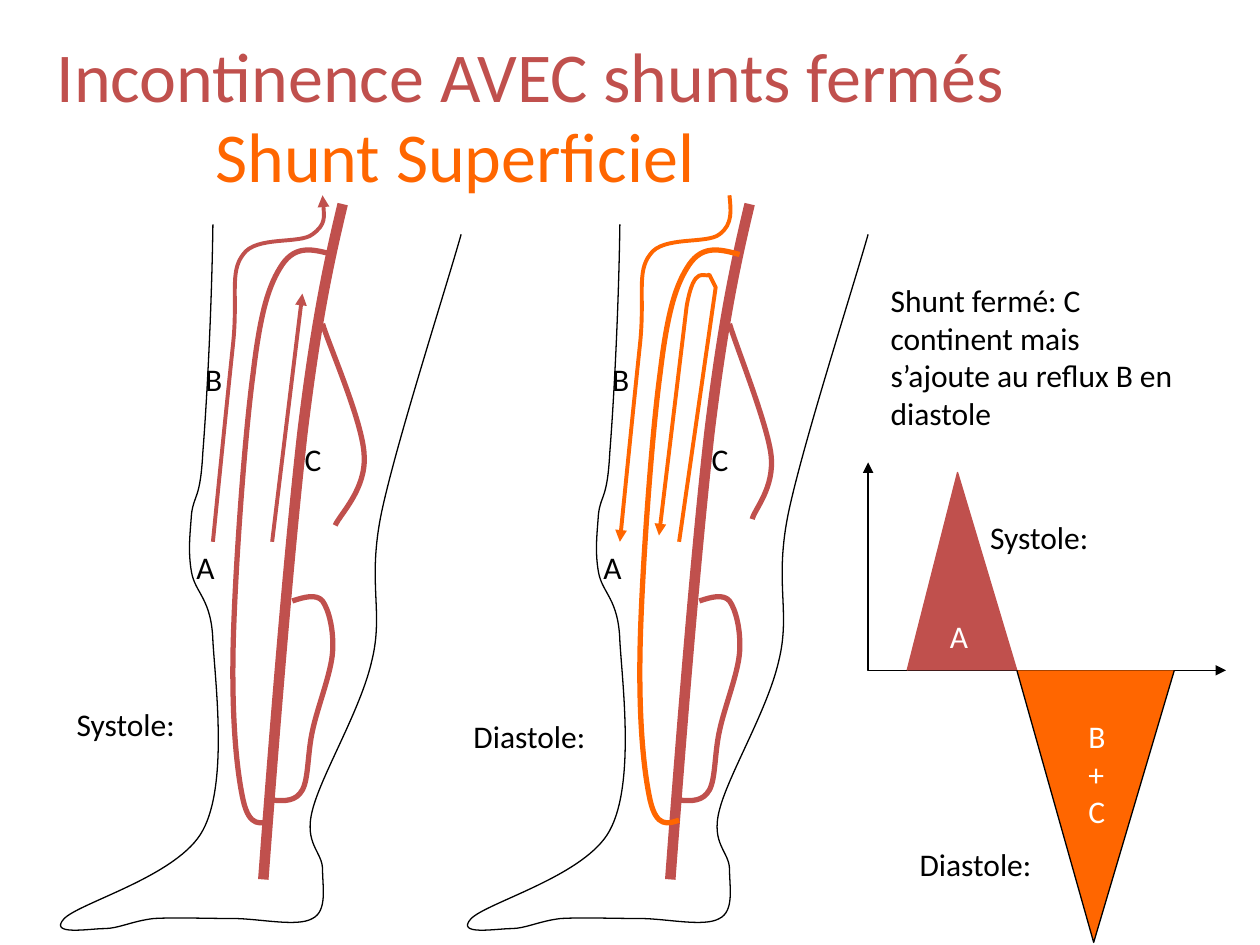
from lxml import etree
from pptx import Presentation
from pptx.dml.color import RGBColor as Rgb
from pptx.enum.shapes import MSO_CONNECTOR as Link
from pptx.enum.text import MSO_AUTO_SIZE as Fit
from pptx.oxml.ns import qn
from pptx.util import Inches, Pt

HUES = {"red": "C0504D", "orange": "FF6600", "black": "000000", "white": "FFFFFF"}
STEP = 3.23  # gap between the two legs

# A path is a start point, then segments: 2 numbers for a line, 6 for a curve.
SKIN = [
    (1.69, 1.78), (1.68, 2.49, 1.64, 3.21, 1.61, 3.59),
    (1.59, 3.97, 1.54, 3.92, 1.52, 4.08), (1.51, 4.23, 1.49, 4.37, 1.52, 4.54),
    (1.55, 4.71, 1.68, 4.75, 1.69, 5.09), (1.71, 5.43, 1.81, 6.22, 1.61, 6.59),
    (1.42, 6.95, 0.64, 7.16, 0.51, 7.29), (0.38, 7.43, 0.71, 7.37, 0.83, 7.37),
    (0.94, 7.37, 1.05, 7.31, 1.22, 7.29), (1.39, 7.28, 1.64, 7.29, 1.85, 7.29),
    (2.06, 7.29, 2.36, 7.36, 2.48, 7.29), (2.6, 7.23, 2.56, 7.04, 2.56, 6.9),
    (2.56, 6.76, 2.41, 6.7, 2.48, 6.43), (2.55, 6.15, 2.86, 5.64, 2.95, 5.25),
    (3.05, 4.85, 2.91, 4.63, 3.03, 4.06), (3.15, 3.5, 3.53, 2.32, 3.66, 1.86),
]
DEEP = [(2.72, 1.62), (2.61, 2.08, 2.51, 2.54, 2.4, 3.44),
        (2.3, 4.33, 2.19, 5.65, 2.09, 6.98)]
LONG = [
    (2.64, 2.02), (2.49, 1.98, 2.35, 1.94, 2.24, 2.1),
    (2.14, 2.25, 2.07, 2.45, 2.01, 2.96), (1.94, 3.47, 1.86, 4.6, 1.85, 5.17),
    (1.84, 5.73, 1.88, 6.12, 1.93, 6.35), (1.98, 6.57, 2.07, 6.54, 2.16, 6.51),
]
CALF = [
    (2.32, 4.77), (2.41, 4.74, 2.51, 4.71, 2.56, 4.77),
    (2.61, 4.84, 2.65, 5, 2.64, 5.17), (2.63, 5.34, 2.52, 5.61, 2.48, 5.8),
    (2.44, 5.98, 2.45, 6.18, 2.4, 6.27), (2.35, 6.36, 2.26, 6.36, 2.16, 6.35),
]
FLOW = [
    (1.69, 4.3), (1.75, 3.7, 1.81, 3.11, 1.85, 2.73),
    (1.89, 2.35, 1.82, 2.16, 1.93, 2.02), (2.03, 1.87, 2.38, 1.94, 2.48, 1.86),
    (2.59, 1.78, 2.57, 1.66, 2.56, 1.55),
]
THIGH_SYS = [(2.56, 2.57), (2.61, 2.74, 2.88, 3.35, 2.89, 3.61),
             (2.91, 3.88, 2.7, 4.08, 2.66, 4.17)]
THIGH_DIA = [(2.56, 2.57), (2.61, 2.74, 2.86, 3.36, 2.89, 3.61),
             (2.92, 3.87, 2.76, 4.04, 2.74, 4.12)]
LOOP = [(5.39, 4.3), (5.68, 2.28), (5.63, 2.18),
        (5.59, 2.21, 5.51, 2.09, 5.45, 2.43), (5.23, 4.25)]
AXES = [(6.89, 3.67), (6.89, 5.32), (9.73, 5.32)]
PEAK = [(7.2, 5.32), (7.6, 3.75), (8.07, 5.32)]
DIP = [(8.07, 5.32), (8.68, 7.48), (9.32, 5.32)]


def color(hue):
    return Rgb.from_string(HUES[hue])


def stroke(item, hue, width, ends=()):
    """Style a line; ends lists "headEnd" (start) and "tailEnd" (finish)."""
    item.line.color.rgb = color(hue)
    item.line.width = Pt(width)
    ln = item.element.find(".//" + qn("a:ln"))
    for end in ends:
        etree.SubElement(ln, qn("a:" + end), type="triangle")


def bend(shape, parts):
    """Turn each run of three line points that belongs to a curve into a cubic."""
    lines = iter(shape.element.findall(".//" + qn("a:lnTo")))
    for part in parts:
        trio = [next(lines) for _ in range(len(part) // 2)]
        if len(trio) == 3:
            cubic = etree.Element(qn("a:cubicBezTo"))
            trio[0].addprevious(cubic)
            for line in trio:
                cubic.append(line[0])
                line.getparent().remove(line)


def trace(slide, route, hue, width, dx=0, ends=(), fill=None):
    start, *parts = route
    spots = [(Inches(p[i] + dx), Inches(p[i + 1]))
             for p in parts for i in range(0, len(p), 2)]
    pen = slide.shapes.build_freeform(Inches(start[0] + dx), Inches(start[1]))
    pen.add_line_segments(spots, close=False)
    shape = pen.convert_to_shape()
    shape.shadow.inherit = False
    bend(shape, parts)
    if fill:
        shape.fill.solid()
        shape.fill.fore_color.rgb = color(fill)
    else:
        shape.fill.background()
    stroke(shape, hue, width, ends)


def arrow(slide, x1, y1, x2, y2, hue):
    link = slide.shapes.add_connector(
        Link.STRAIGHT, Inches(x1), Inches(y1), Inches(x2), Inches(y2))
    stroke(link, hue, 2.25, ["tailEnd"])
    etree.SubElement(link.element.spPr, qn("a:effectLst"))


def write(slide, text, x, y, w, h=0.4, size=18, hue="black"):
    box = slide.shapes.add_textbox(Inches(x), Inches(y), Inches(w), Inches(h))
    frame = box.text_frame
    frame.word_wrap = True
    frame.auto_size = Fit.SHAPE_TO_FIT_TEXT
    run = frame.paragraphs[0].add_run()
    run.text = text
    run.font.name = "Calibri"
    run.font.size = Pt(size)
    run.font.color.rgb = color(hue)


def leg(slide, dx, hue, thigh, end):
    """Draw one leg with its veins, the flow B and the labels."""
    trace(slide, SKIN, "black", 0.75, dx)
    trace(slide, DEEP, "red", 6, dx)
    trace(slide, LONG, hue, 3, dx)
    trace(slide, thigh, "red", 3, dx)
    trace(slide, CALF, "red", 3, dx)
    trace(slide, FLOW, hue, 2.25, dx, [end])
    for name, x, y in [("C", 2.32, 3.44), ("B", 1.53, 2.81), ("A", 1.46, 4.3)]:
        write(slide, name, x + dx, y, 0.39)


def graph(slide):
    trace(slide, AXES, "black", 0.75, ends=["headEnd", "tailEnd"])
    trace(slide, PEAK, "red", 0.75, fill="red")
    trace(slide, DIP, "black", 0.75, fill="orange")
    write(slide, "A", 7.44, 4.85, 0.39, hue="white")
    write(slide, "B+C", 8.54, 5.64, 0.39, 1, hue="white")


def main():
    deck = Presentation()
    deck.slide_width, deck.slide_height = Inches(10), Inches(7.5)
    slide = deck.slides.add_slide(deck.slide_layouts[6])

    write(slide, "Incontinence AVEC shunts fermés", 0.35, 0.21, 9.53, 1.77, 40, "red")
    write(slide, "Shunt Superficiel", 1.61, 0.84, 8.58, 1.77, 40, "orange")
    leg(slide, 0, "red", THIGH_SYS, "tailEnd")
    arrow(slide, 2.16, 4.3, 2.4, 2.33, "red")
    leg(slide, STEP, "orange", THIGH_DIA, "headEnd")
    trace(slide, LOOP, "orange", 2.25, ends=["tailEnd"])
    graph(slide)

    for text, x, y in [("Systole:", 0.51, 5.55), ("Diastole:", 3.66, 5.64),
                       ("Systole:", 7.76, 4.06), ("Diastole:", 7.2, 6.66)]:
        write(slide, text, x, y, 2.36)
    write(slide, "Shunt fermé: C continent mais s’ajoute au reflux B en diastole",
          6.97, 2.18, 2.44, 1.3)
    deck.save("out.pptx")


if __name__ == "__main__":
    main()
